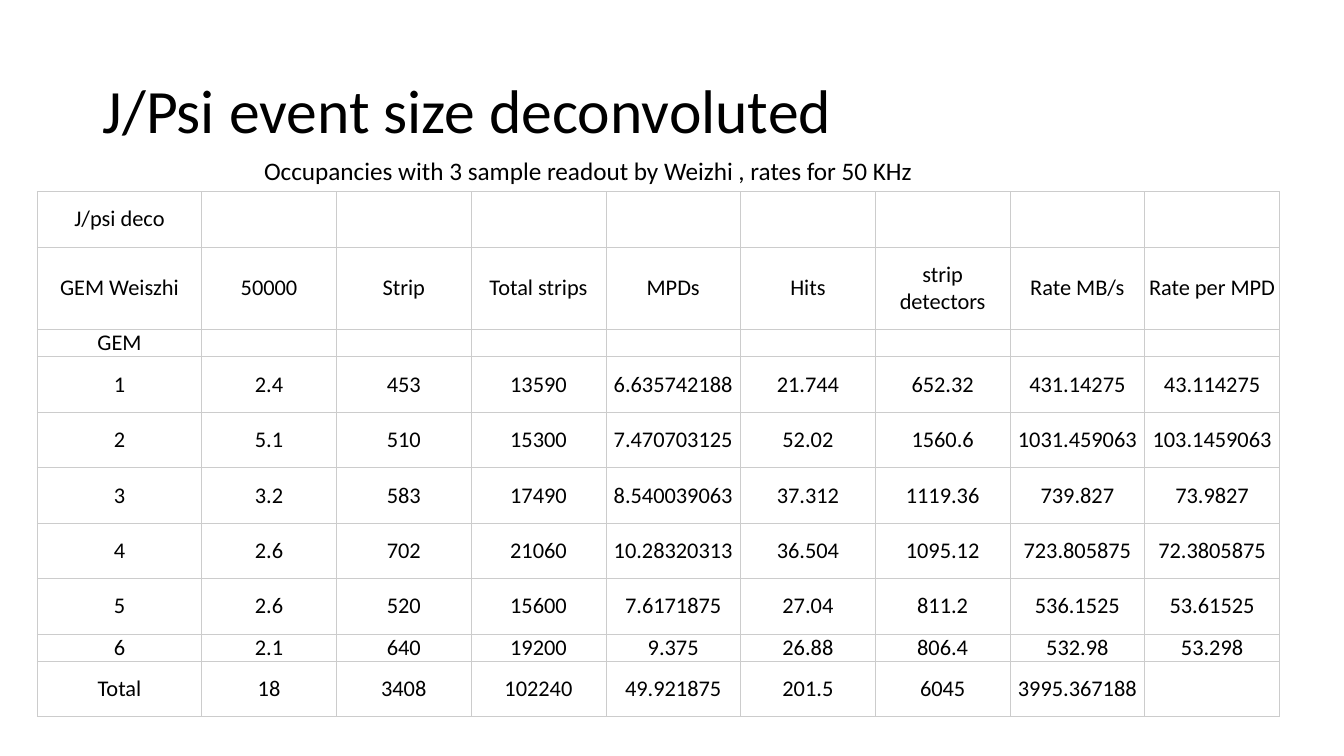
import pptx
import pptx.util
import pptx.dml.color
import pptx.enum.text
import pptx.oxml.ns
import lxml.etree

PX = 9144
HUES = {"ink": "000000", "rule": "CCCCCC", "page": "FFFFFF"}
FACE = "Calibri"
MID = pptx.enum.text.MSO_ANCHOR.MIDDLE
MAIN = pptx.oxml.ns.qn

deck = pptx.Presentation()
deck.slide_width = 1333 * PX
deck.slide_height = 750 * PX
slide = deck.slides.add_slide(deck.slide_layouts[6])
slide.background.fill.solid()
slide.background.fill.fore_color.rgb = pptx.dml.color.RGBColor.from_string(HUES["page"])


def style(para, size):
    for run in para.runs:
        run.font.size = pptx.util.Pt(size)
        run.font.name = FACE
        run.font.color.rgb = pptx.dml.color.RGBColor.from_string(HUES["ink"])


def edge(cell):
    props = cell._tc.get_or_add_tcPr()
    for spot, side in enumerate(("lnL", "lnR", "lnT", "lnB")):
        line = lxml.etree.Element(MAIN("a:" + side), w=str(pptx.util.Pt(0.5)))
        fill = lxml.etree.SubElement(line, MAIN("a:solidFill"))
        lxml.etree.SubElement(fill, MAIN("a:srgbClr"), val=HUES["rule"])
        props.insert(spot, line)


title = slide.shapes.add_textbox(92 * PX, 40 * PX, 1150 * PX, 145 * PX).text_frame
title.word_wrap = True
title.vertical_anchor = MID
title.text = "J/Psi event size deconvoluted"
title.paragraphs[0].line_spacing = 0.9
style(title.paragraphs[0], 44)

note = slide.shapes.add_textbox(252 * PX, 149 * PX, 672 * PX, 40 * PX).text_frame
note.word_wrap = False
note.auto_size = pptx.enum.text.MSO_AUTO_SIZE.SHAPE_TO_FIT_TEXT
note.text = "Occupancies with 3 sample readout by Weizhi , rates for 50 KHz"
style(note.paragraphs[0], 18)

ROWS = [
    (55, ["J/psi deco"]),
    (82, ["GEM Weiszhi", "50000", "Strip", "Total strips", "MPDs", "Hits",
          "strip detectors", "Rate MB/s", "Rate per MPD"]),
    (27, ["GEM"]),
    (55, ["1", "2.4", "453", "13590", "6.635742188", "21.744", "652.32", "431.14275", "43.114275"]),
    (55, ["2", "5.1", "510", "15300", "7.470703125", "52.02", "1560.6", "1031.459063", "103.1459063"]),
    (55, ["3", "3.2", "583", "17490", "8.540039063", "37.312", "1119.36", "739.827", "73.9827"]),
    (55, ["4", "2.6", "702", "21060", "10.28320313", "36.504", "1095.12", "723.805875", "72.3805875"]),
    (55, ["5", "2.6", "520", "15600", "7.6171875", "27.04", "811.2", "536.1525", "53.61525"]),
    (27, ["6", "2.1", "640", "19200", "9.375", "26.88", "806.4", "532.98", "53.298"]),
    (55, ["Total", "18", "3408", "102240", "49.921875", "201.5", "6045", "3995.367188"]),
]
COLS = 9
WIDE = 1232
FIRST = 163

frame = slide.shapes.add_table(len(ROWS), COLS, 37 * PX, 190 * PX, WIDE * PX, 520 * PX)
table = frame.table
table.first_row = False
table.horz_banding = False
for col in table.columns:
    col.width = (WIDE - FIRST) * PX // (COLS - 1)
table.columns[0].width = FIRST * PX

for row, (high, words) in zip(table.rows, ROWS):
    row.height = high * PX
    for spot, cell in enumerate(row.cells):
        cell.margin_left = cell.margin_right = 2 * PX
        cell.margin_top = cell.margin_bottom = 0
        cell.vertical_anchor = MID
        cell.fill.background()
        edge(cell)
        para = cell.text_frame.paragraphs[0]
        para.alignment = pptx.enum.text.PP_ALIGN.CENTER
        if spot < len(words):
            para.text = words[spot]
            style(para, 16)
        else:
            lxml.etree.SubElement(para._p, MAIN("a:endParaRPr"), sz="1600")

deck.save("out.pptx")
